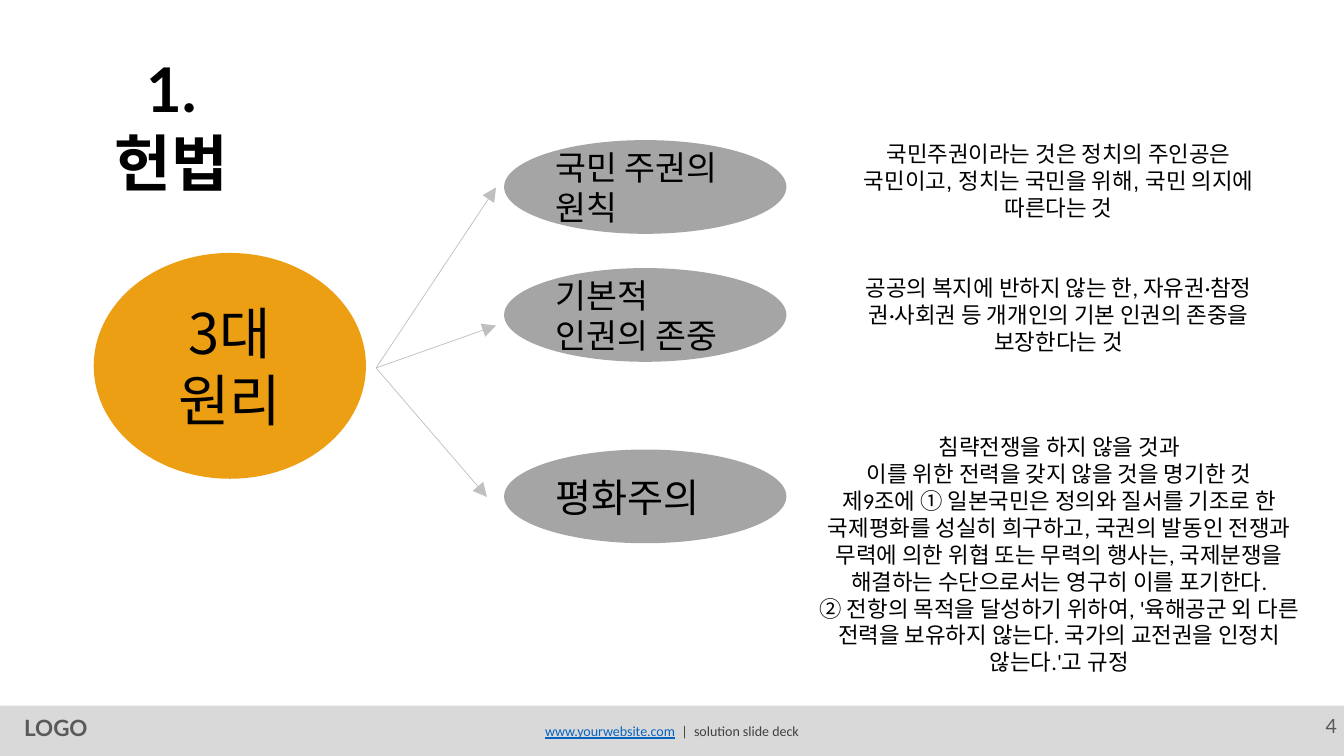
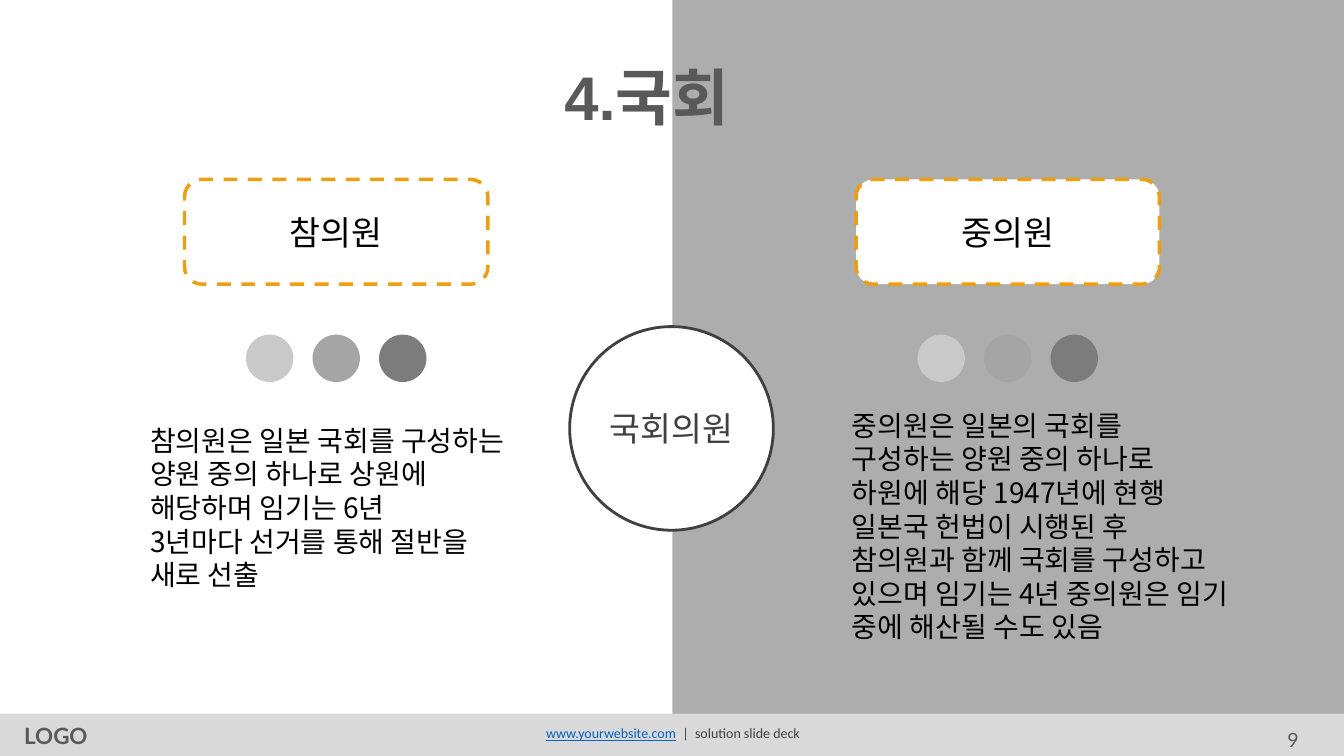
from dataclasses import dataclass

from lxml import etree
from pptx import Presentation
from pptx.dml.color import RGBColor
from pptx.enum.dml import MSO_LINE_DASH_STYLE as Dash
from pptx.enum.shapes import MSO_CONNECTOR as Link, MSO_SHAPE as Kind
from pptx.enum.text import MSO_ANCHOR as Anchor, PP_ALIGN as Align
from pptx.oxml.ns import qn
from pptx.util import Inches, Pt

# Shared colours and fonts
BLACK = RGBColor(0x00, 0x00, 0x00)
WHITE = RGBColor(0xFF, 0xFF, 0xFF)
ORANGE = RGBColor(0xED, 0x9F, 0x13)
LIGHT = RGBColor(0xC9, 0xC9, 0xC9)
GRAY = RGBColor(0xA5, 0xA5, 0xA5)
DARK = RGBColor(0x7C, 0x7C, 0x7C)
BAND = RGBColor(0xD9, 0xD9, 0xD9)
RULE = RGBColor(0xBF, 0xBF, 0xBF)
SLATE = RGBColor(0x59, 0x59, 0x59)
INK = RGBColor(0x40, 0x40, 0x40)
BLUE = RGBColor(0x05, 0x63, 0xC1)
NOTO, LATO = "Noto Sans CJK KR", "Lato"
WIDE = 13.33


@dataclass
class Box:
    x: float
    y: float
    w: float
    h: float

    def size(self) -> list:
        return [Inches(v) for v in (self.x, self.y, self.w, self.h)]


@dataclass
class Rule:
    """One principle: its oval, its explanation and its arrow tip."""
    name: str
    size: int
    top: float
    tip: tuple
    note: str
    box: Box
    font: str
    side: float = 0.1
    base: float = 0.05


@dataclass
class House:
    """One chamber of the parliament, on one half of the slide."""
    name: str
    left: float
    note: str
    box: Box


# Drawing helpers
def style(run, size, font, color, bold=False, under=False) -> None:
    face = run.font
    face.size, face.name, face.bold = Pt(size), font, bold
    face.underline = under
    face.color.rgb = color
    east = etree.SubElement(run._r.get_or_add_rPr(), qn("a:ea"))
    east.set("typeface", NOTO)


def write(shape, text, *, size=16, font=NOTO, color=BLACK, bold=False,
          align=Align.CENTER, anchor=Anchor.MIDDLE, pad=(0.1, 0.05, 0.1, 0.05),
          space=None) -> None:
    frame = shape.text_frame
    frame.word_wrap, frame.vertical_anchor = True, anchor
    (frame.margin_left, frame.margin_top,
     frame.margin_right, frame.margin_bottom) = [Inches(v) for v in pad]
    for i, line in enumerate(text.split("\n")):
        para = frame.add_paragraph() if i else frame.paragraphs[0]
        para.alignment = align
        if space:
            para.line_spacing = space
        run = para.add_run()
        run.text = line
        style(run, size, font, color, bold)


def label(slide, box: Box, text: str, **form):
    area = slide.shapes.add_textbox(*box.size())
    write(area, text, **form)
    return area


def block(slide, kind, box: Box, fill, line=None, width=1.0):
    shape = slide.shapes.add_shape(kind, *box.size())
    shape.shadow.inherit = False
    shape.fill.solid()
    shape.fill.fore_color.rgb = fill
    if line is None:
        shape.line.fill.background()
    else:
        shape.line.color.rgb = line
        shape.line.width = Pt(width)
    return shape


def arrow(slide, start: tuple, end: tuple) -> None:
    line = slide.shapes.add_connector(
        Link.STRAIGHT, *[Inches(v) for v in (*start, *end)])
    line.line.color.rgb = RULE
    line.line.width = Pt(0.5)
    etree.SubElement(line.line._get_or_add_ln(), qn("a:tailEnd"),
                     type="triangle", w="lg", len="lg")
    etree.SubElement(line._element.spPr, qn("a:effectLst"))


def footer(slide, page: str, top: float, site: Box, spot: Box) -> None:
    block(slide, Kind.RECTANGLE, Box(0, top, WIDE, 0.52), BAND)
    label(slide, Box(0.11, top + 0.02, 0.99, 0.39), "LOGO", font=LATO,
          color=SLATE, bold=True, align=Align.LEFT,
          pad=(0.13, 0.07, 0.13, 0.07))
    label(slide, spot, page, size=14, font=LATO, color=SLATE,
          anchor=Anchor.TOP)
    area = label(slide, site, "www.yourwebsite.com", size=10, font="Calibri",
                 color=BLUE, anchor=Anchor.TOP)
    para = area.text_frame.paragraphs[0]
    para.runs[0].font.underline = True
    rest = para.add_run()
    rest.text = "  |  solution slide deck"
    style(rest, 10, "Calibri", INK)


# Content
RULES = [
    Rule("국민 주권의 원칙", 24, 1.39, (4.92, 1.86),
         "국민주권이라는 것은 정치의 주인공은 국민이고, 정치는 국민을 위해, "
         "국민 의지에 따른다는 것",
         Box(8.36, 1.3, 4.28, 0.98), "Arial", side=0.2),
    Rule("기본적 인권의 존중", 24, 2.66, (4.92, 3.23),
         "공공의 복지에 반하지 않는 한, 자유권·참정권·사회권 등 개개인의 "
         "기본 인권의 존중을 보장한다는 것",
         Box(8.36, 2.58, 4.28, 1.08), "Calibri"),
    Rule("평화주의", 28, 4.46, (4.83, 4.93),
         "침략전쟁을 하지 않을 것과\n"
         "이를 위한 전력을 갖지 않을 것을 명기한 것\n"
         "제9조에 ① 일본국민은 정의와 질서를 기조로 한 국제평화를 성실히 "
         "희구하고, 국권의 발동인 전쟁과 무력에 의한 위협 또는 무력의 행사는, "
         "국제분쟁을 해결하는 수단으로서는 영구히 이를 포기한다.\n"
         "② 전항의 목적을 달성하기 위하여, '육해공군 외 다른 전력을 보유하지 "
         "않는다. 국가의 교전권을 인정치 않는다.'고 규정",
         Box(7.93, 4.74, 5.15, 1.79), "Calibri", base=0.32),
]
HOUSES = [
    House("참의원", 1.83,
          "참의원은 일본 국회를 구성하는 양원 중의 하나로 상원에 해당하며 "
          "임기는 6년\n3년마다 선거를 통해 절반을 새로 선출",
          Box(1.39, 4.15, 3.89, 1.78)),
    House("중의원", 8.49,
          "중의원은 일본의 국회를 구성하는 양원 중의 하나로 하원에 해당 "
          "1947년에 현행 일본국 헌법이 시행된 후 참의원과 함께 국회를 "
          "구성하고 있으며 임기는 4년 중의원은 임기 중에 해산될 수도 있음",
          Box(8.35, 4, 3.96, 2.79)),
]


def charter(slide) -> None:
    # Title and main idea
    label(slide, Box(0.67, 0.46, 2.06, 0.84), "1. 헌법", size=44, font=LATO,
          bold=True, anchor=Anchor.TOP, pad=(0.35, 0.05, 0.35, 0.05))
    core = block(slide, Kind.OVAL, Box(0.93, 2.51, 2.7, 2.24), ORANGE)
    write(core, "3대\n원리", size=40)
    # Three principles
    for rule in RULES:
        arrow(slide, (3.73, 3.65), rule.tip)
        oval = block(slide, Kind.OVAL, Box(5, rule.top, 2.8, 0.93), GRAY)
        write(oval, rule.name, size=rule.size, align=Align.LEFT)
        label(slide, rule.box, rule.note, font=rule.font,
              pad=(rule.side, 0.05, rule.side, rule.base))
    footer(slide, "4", 7, Box(4.25, 7.12, 4.83, 0.27),
           Box(12.9, 7.03, 0.61, 0.34))


def diet(slide) -> None:
    # Shaded right half
    half = block(slide, Kind.RECTANGLE, Box(6.67, 0, 6.67, 7.5), GRAY)
    tint = half._element.spPr.find(qn("a:solidFill"))[0]
    etree.SubElement(tint, qn("a:alpha")).set("val", "90000")
    footer(slide, "9", 7.08, Box(4.26, 7.14, 4.83, 0.27),
           Box(12.52, 7.17, 0.61, 0.34))
    label(slide, Box(1.82, 0.59, 9.19, 0.82), "4.국회", size=44,
          font="Arial", color=SLATE, bold=True, space=0.9)
    # Hub
    hub = block(slide, Kind.OVAL, Box(5.65, 3.24, 2.02, 2.02), WHITE, INK, 2)
    write(hub, "국회의원", size=24, color=INK, pad=(0, 0, 0, 0))
    # Two chambers
    for house in HOUSES:
        card = block(slide, Kind.ROUNDED_RECTANGLE,
                     Box(house.left, 1.78, 3.01, 1.04), WHITE, ORANGE, 2.5)
        card.line.dash_style = Dash.DASH
        write(card, house.name, size=24)
        for i, tone in enumerate((LIGHT, GRAY, DARK)):
            block(slide, Kind.OVAL,
                  Box(house.left + 0.61 + 0.66 * i, 3.32, 0.47, 0.47), tone)
        label(slide, house.box, house.note, size=20, align=Align.LEFT,
              anchor=Anchor.TOP)


def main() -> None:
    deck = Presentation()
    deck.slide_width, deck.slide_height = Inches(WIDE), Inches(7.5)
    for draw in (charter, diet):
        draw(deck.slides.add_slide(deck.slide_layouts[6]))
    deck.save("out.pptx")


if __name__ == "__main__":
    main()
